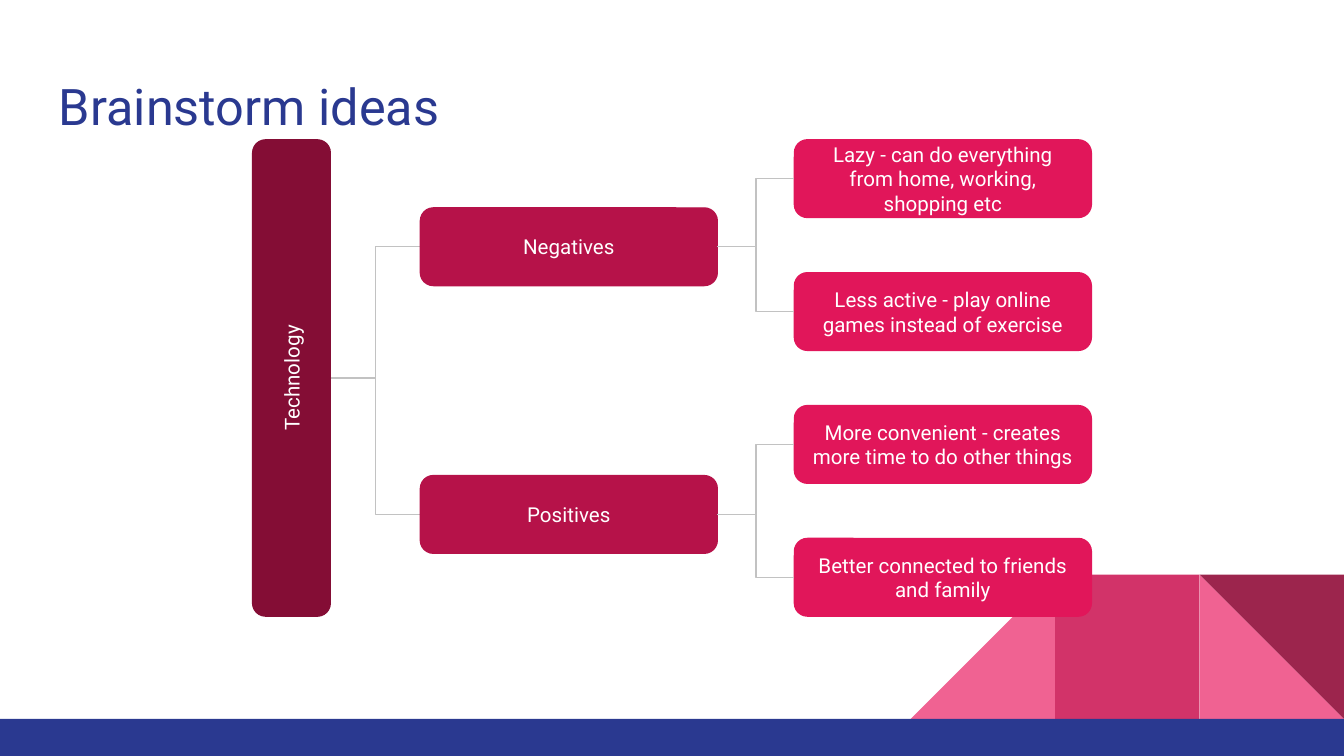
from pptx import Presentation
from pptx.dml.color import RGBColor
from pptx.enum.shapes import MSO_CONNECTOR, MSO_SHAPE
from pptx.enum.text import MSO_ANCHOR, PP_ALIGN
from pptx.oxml.ns import qn
from pptx.util import Inches, Pt
from lxml.etree import SubElement

W, H = 10, 5.625
FONT = "Roboto"
COLORS = {
    "white": "FFFFFF", "navy": "2A3990", "line": "C2C2C2",
    "root": "840D35", "branch": "B61249", "leaf": "E1165A",
    "pink": "F06292", "rose": "D23369", "wine": "9C254D",
}
ROOT = "Technology"
BRANCHES = [
    ("Negatives", ["Lazy - can do everything from home, working, shopping etc",
                   "Less active - play online games instead of exercise"]),
    ("Positives", ["More convenient - creates more time to do other things",
                   "Better connected to friends and family"]),
]


def color(name):
    return RGBColor.from_string(COLORS[name])


def add_block(slide, kind, box, fill, outlined=False):
    sp = slide.shapes.add_shape(kind, *map(Inches, box))
    sp.shadow.inherit = False
    sp.fill.solid()
    sp.fill.fore_color.rgb = color(fill)
    if outlined:
        sp.line.color.rgb = color(fill)
        sp.line.width = Pt(0.75)
    else:
        sp.line.fill.background()
    return sp


def add_text(sp, text, size, fill, anchor, align):
    tf = sp.text_frame
    tf.word_wrap = True
    tf.vertical_anchor = anchor
    tf.margin_left = tf.margin_right = Inches(0.1)
    tf.margin_top = tf.margin_bottom = Inches(0.1)
    p = tf.paragraphs[0]
    p.alignment = align
    r = p.add_run()
    r.text = text
    r.font.name = FONT
    r.font.size = Pt(size)
    r.font.color.rgb = color(fill)


def add_node(slide, box, text, fill):
    sp = add_block(slide, MSO_SHAPE.ROUNDED_RECTANGLE, box, fill, True)
    sp.adjustments[0] = 0.167
    add_text(sp, text, 11, "white", MSO_ANCHOR.MIDDLE, PP_ALIGN.CENTER)
    return sp


def add_elbow(slide, start, end):
    cn = slide.shapes.add_connector(
        MSO_CONNECTOR.ELBOW, *map(Inches, (*start, *end)))
    cn.line.color.rgb = color("line")
    cn.line.width = Pt(0.75)
    SubElement(cn.element.spPr, qn("a:effectLst"))


def add_decor(slide, box):
    x, y, w, h = box
    bar = h * 0.204
    side = h - bar
    left = x + w - 3 * side
    tiles = [
        (2, MSO_SHAPE.RIGHT_TRIANGLE, "pink", 0, False),
        (0, MSO_SHAPE.RIGHT_TRIANGLE, "pink", 0, True),
        (1, MSO_SHAPE.RECTANGLE, "rose", 0, False),
        (2, MSO_SHAPE.RIGHT_TRIANGLE, "wine", 180, False),
    ]
    for col, kind, fill, angle, mirrored in tiles:
        sp = add_block(slide, kind, (left + col * side, y, side, side), fill)
        sp.rotation = angle
        if mirrored:
            sp.element.spPr.find(qn("a:xfrm")).set("flipH", "1")
    add_block(slide, MSO_SHAPE.RECTANGLE, (x, y + side, w, bar), "navy")


def add_title(slide, box, text):
    tb = slide.shapes.add_textbox(*map(Inches, box))
    add_text(tb, text, 27, "navy", MSO_ANCHOR.BOTTOM, PP_ALIGN.LEFT)


def add_tree(slide, box):
    x, y, w, h = box
    node_w, node_h = w * 0.354, h * 0.163
    branch_x, leaf_x = x + w * 0.2, x + w - node_w
    leaf_step = (h - node_h) / 3
    branch_top, branch_step = y + h * 0.143, h * 0.562
    root_end = (x + node_h, y + h / 2)

    for i, (branch, leaves) in enumerate(BRANCHES):
        top = branch_top + i * branch_step
        mid = top + node_h / 2
        add_elbow(slide, root_end, (branch_x, mid))
        add_node(slide, (branch_x, top, node_w, node_h), branch, "branch")
        for j, leaf in enumerate(leaves):
            leaf_y = y + (2 * i + j) * leaf_step
            add_node(slide, (leaf_x, leaf_y, node_w, node_h), leaf, "leaf")
            add_elbow(slide, (branch_x + node_w, mid),
                      (leaf_x, leaf_y + node_h / 2))

    root_box = (x + (node_h - h) / 2, y + (h - node_h) / 2, h, node_h)
    add_node(slide, root_box, ROOT, "root").rotation = 270


def main():
    prs = Presentation()
    prs.slide_width, prs.slide_height = Inches(W), Inches(H)
    slide = prs.slides.add_slide(prs.slide_layouts[6])
    add_decor(slide, (0, H * 0.76, W, H * 0.24))
    add_title(slide, (W * 0.034, H * 0.08, W * 0.932, H * 0.117), "Brainstorm ideas")
    add_tree(slide, (W * 0.188, H * 0.185, W * 0.624, H * 0.63))
    prs.save("out.pptx")


if __name__ == "__main__":
    main()
